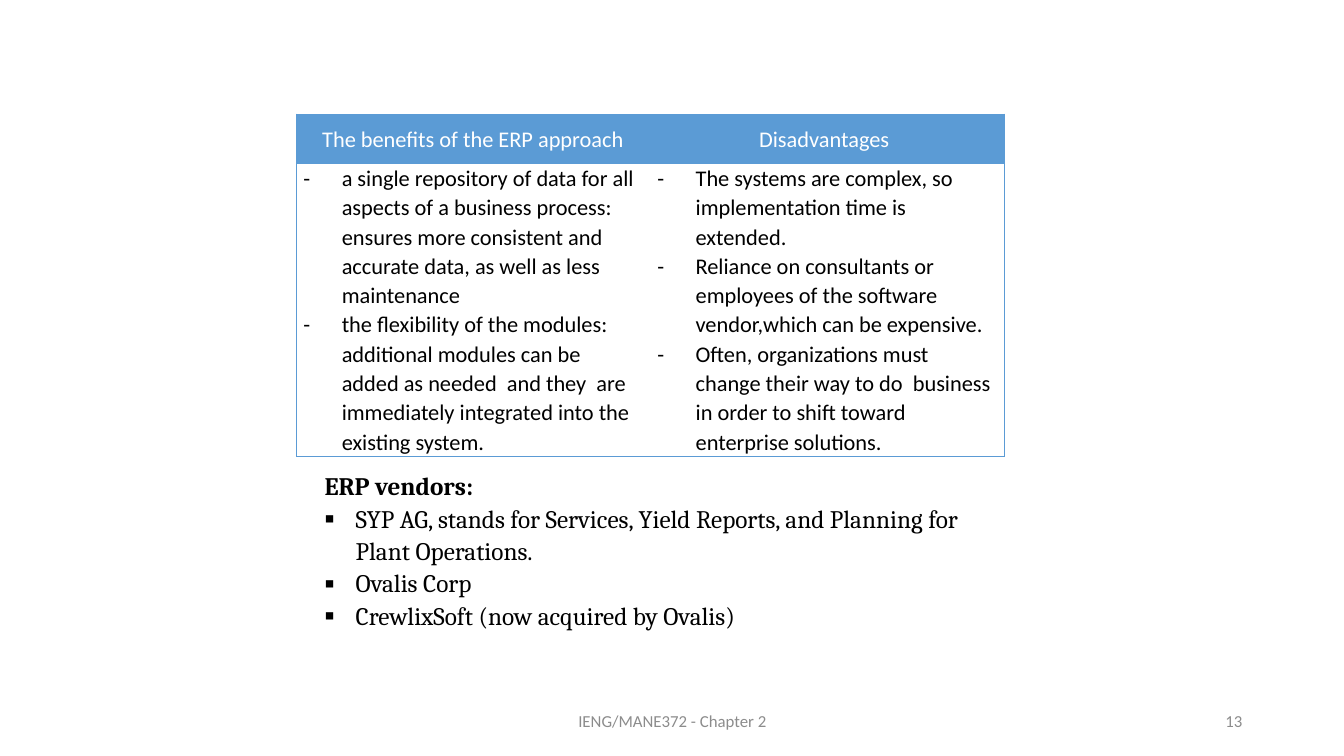
from pptx import Presentation
from pptx import util as u
from pptx.dml import color
from pptx.enum import text
from pptx.oxml import ns
from lxml import etree

PX = 9144
BLUE = "5B9BD5"
BLACK = "000000"
GRAY = "8C8C8C"
WHITE = "FFFFFF"
LEFT, MID, RIGHT = text.PP_ALIGN.LEFT, text.PP_ALIGN.CENTER, text.PP_ALIGN.RIGHT

HEADS = ["The benefits of the ERP approach", "Disadvantages "]
POINTS = [
    [
        "a single repository of data for all aspects of a business process: "
        "ensures more consistent and accurate data, as well as less maintenance",
        "the flexibility of the modules:  additional modules can be added as "
        "needed  and they  are immediately integrated into the existing system.",
    ],
    [
        "The systems are complex, so implementation time is extended.",
        "Reliance on consultants or employees of the software "
        "vendor,which can be expensive.",
        "Often, organizations must change their way to do  business in order "
        "to shift toward enterprise solutions.",
    ],
]
VENDORS = [
    "SYP AG, stands for Services, Yield Reports, and Planning for Plant Operations.",
    "Ovalis Corp",
    "CrewlixSoft (now acquired by Ovalis)",
]


def px(n):
    return u.Emu(n * PX)


def rgb(code):
    return color.RGBColor.from_string(code)


def write(para, words, font="Calibri", size=16, fill=BLACK, bold=False,
          align=LEFT, space=1.07, mark=None, indent=0):
    if mark:
        props = para._p.get_or_add_pPr()
        props.set("marL", str(px(indent)))
        props.set("indent", str(-px(indent)))
        etree.SubElement(props, ns.qn("a:buFont"), typeface=font)
        etree.SubElement(props, ns.qn("a:buChar"), char=mark)
    para.alignment = align
    para.line_spacing = space
    run = para.add_run()
    run.text = words
    run.font.name = font
    run.font.size = u.Pt(size)
    run.font.bold = bold
    run.font.color.rgb = rgb(fill)


def fill_list(frame, lines, **form):
    for i, line in enumerate(lines):
        para = frame.add_paragraph() if i else frame.paragraphs[0]
        write(para, line, **form)


def edge(cell, sides):
    props = cell._tc.get_or_add_tcPr()
    for i, side in enumerate("LRTB"):
        line = etree.Element(ns.qn("a:ln" + side), w=str(u.Pt(0.5)))
        if side in sides:
            solid = etree.SubElement(line, ns.qn("a:solidFill"))
            etree.SubElement(solid, ns.qn("a:srgbClr"), val=BLUE)
        else:
            etree.SubElement(line, ns.qn("a:noFill"))
        props.insert(i, line)


def add_grid(slide, x, y, w, h):
    grid = slide.shapes.add_table(2, 2, px(x), px(y), px(w), px(h)).table
    grid.first_row = grid.horz_banding = False
    head = 49
    grid.rows[0].height, grid.rows[1].height = px(head), px(h - head)
    for c, (title, points) in enumerate(zip(HEADS, POINTS)):
        grid.columns[c].width = px(w // 2)
        top, body = grid.cell(0, c), grid.cell(1, c)
        for cell in (top, body):
            cell.margin_left, cell.margin_right = px(7), px(8)
            cell.margin_top = cell.margin_bottom = 0
            cell.vertical_anchor = text.MSO_ANCHOR.MIDDLE
        top.fill.solid()
        top.fill.fore_color.rgb = rgb(BLUE)
        body.fill.background()
        edge(top, "LR"[c] + "T")
        edge(body, "LR"[c] + "TB")
        write(top.text_frame.paragraphs[0], title, fill=WHITE, align=MID)
        fill_list(body.text_frame, points, mark="-", indent=38)


def add_box(slide, x, y, w, h, anchor=text.MSO_ANCHOR.TOP):
    frame = slide.shapes.add_textbox(px(x), px(y), px(w), px(h)).text_frame
    frame.word_wrap = True
    frame.vertical_anchor = anchor
    return frame


def add_vendors(slide, x, y, w, h):
    frame = add_box(slide, x, y, w, h)
    form = dict(font="Cambria", size=18)
    write(frame.paragraphs[0], "ERP vendors:", bold=True, **form)
    for name in VENDORS:
        write(frame.add_paragraph(), name, mark="▪", indent=31, **form)


def add_foot(slide, x, y, w, h):
    wide, num = 450, 300
    parts = [(x, wide, "IENG/MANE372 - Chapter 2", MID),
             (x + w - num, num, "13", RIGHT)]
    for left, width, words, align in parts:
        frame = add_box(slide, left, y, width, h, text.MSO_ANCHOR.MIDDLE)
        write(frame.paragraphs[0], words, size=12, fill=GRAY, align=align, space=1.0)


def main():
    deck = Presentation()
    deck.slide_width, deck.slide_height = px(1333), px(750)
    slide = deck.slides.add_slide(deck.slide_layouts[6])
    add_grid(slide, 294, 113, 702, 333)
    add_vendors(slide, 312, 460, 702, 203)
    add_foot(slide, 442, 695, 800, 40)
    deck.save("out.pptx")


if __name__ == "__main__":
    main()
